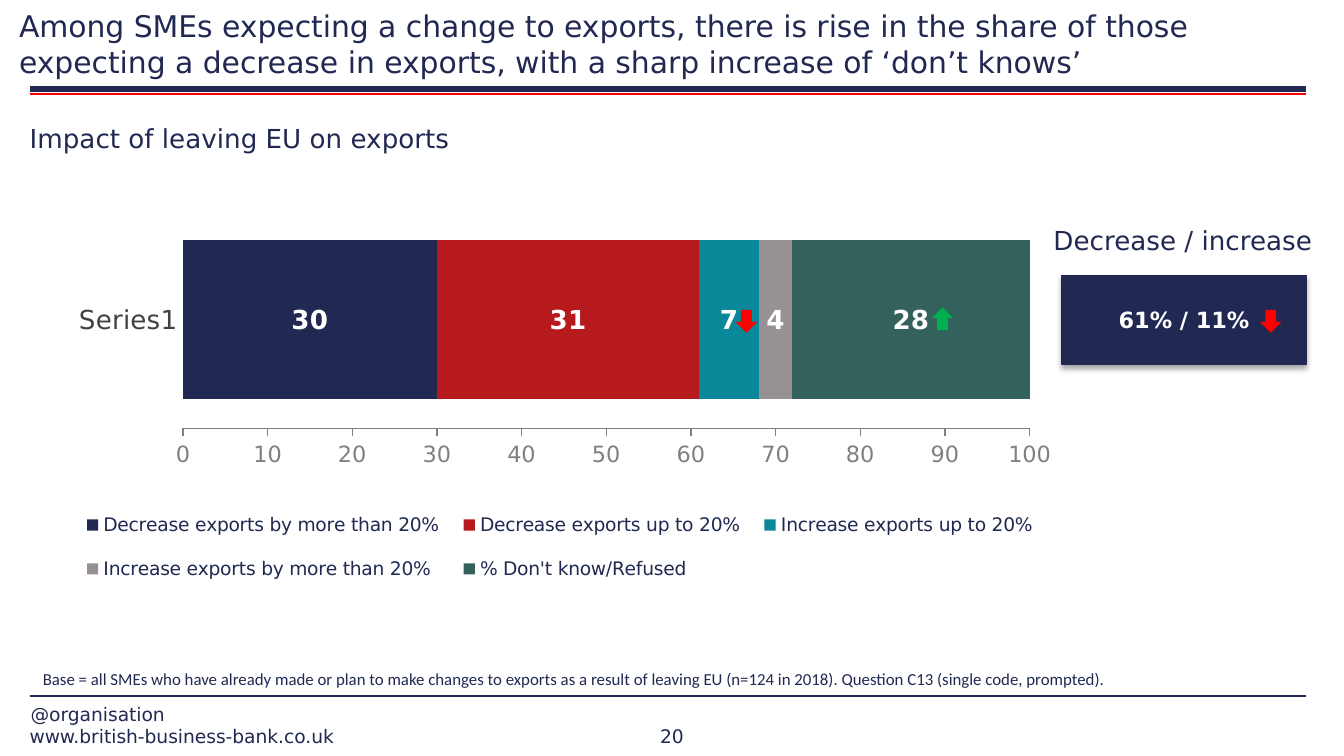
from lxml import etree
from pptx import Presentation
from pptx.chart.data import CategoryChartData
from pptx.dml.color import RGBColor
from pptx.enum.chart import XL_CHART_TYPE, XL_LEGEND_POSITION, XL_TICK_MARK
from pptx.enum.shapes import MSO_CONNECTOR, MSO_SHAPE
from pptx.enum.text import MSO_ANCHOR, MSO_AUTO_SIZE, PP_ALIGN
from pptx.oxml import parse_xml
from pptx.oxml.ns import nsdecls, qn
from pptx.util import Cm, Pt

LEFT, CENTER = PP_ALIGN.LEFT, PP_ALIGN.CENTER
TOP, MIDDLE, BOTTOM = MSO_ANCHOR.TOP, MSO_ANCHOR.MIDDLE, MSO_ANCHOR.BOTTOM

COLORS = {
    "navy": "212952", "crimson": "B61A1D", "teal": "088899", "grey": "979195",
    "pine": "33615B", "red": "FF0000", "green": "00B050", "white": "FFFFFF",
    "category": "424242", "scale": "808080",
}
FONT = "DejaVu Sans"

TITLE = ("Among SMEs expecting a change to exports, there is rise in the share of those "
         "expecting a decrease in exports, with a sharp increase of ‘don’t knows’")
SUBTITLE = "Impact of leaving EU on exports"
BASE_NOTE = ("Base = all SMEs who have already made or plan to make changes to exports as a result "
             "of leaving EU (n=124 in 2018). Question C13 (single code, prompted).")
SUMMARY_HEADING = "Decrease / increase"
SUMMARY = "61% / 11%"

# text, box in cm, alignment
FOOTERS = [
    ("www.british-business-bank.co.uk", (0.56, 13.69, 8.1, 0.43), LEFT),
    ("@organisation", (0.58, 13.28, 8.08, 0.43), LEFT),
    ("20", (11.2, 13.69, 3, 0.43), CENTER),
]
# height on the page in cm, colour, width in points
RULES = [(1.68, "navy", 3), (1.78, "red", 1), (13.16, "navy", 1)]
RULE_LEFT, RULE_RIGHT = 0.56, 24.69

CATEGORY = "Series1"
SERIES = [
    ("Decrease exports by more than 20%", 30, "navy"),
    ("Decrease exports up to 20%", 31, "crimson"),
    ("Increase exports up to 20%", 7, "teal"),
    ("Increase exports by more than 20%", 4, "grey"),
    ("% Don't know/Refused", 28, "pine"),
]
CHART_BOX = (0.71, 3.99, 19.35, 7.47)
PLOT_AREA = (0.142, 0, 0.827, 0.55)
LEGEND_AREA = (0.03, 0.71, 0.96, 0.28)

# left, top in cm, rotation, colour
TREND_ARROWS = [(13.89, 5.87, 90, "red"), (17.6, 5.82, 270, "green"), (23.8, 5.87, 90, "red")]


def rgb(name):
    return RGBColor.from_string(COLORS[name])


def cm(box):
    return [Cm(length) for length in box]


def style_font(font, size, color="navy", bold=False, name=FONT):
    font.name, font.size, font.bold = name, Pt(size), bold
    font.color.rgb = rgb(color)


def write(shape, text, size, color="navy", align=LEFT, anchor=TOP, bold=False,
          name=FONT, inset=True):
    frame = shape.text_frame
    frame.word_wrap = True
    frame.auto_size = MSO_AUTO_SIZE.NONE
    frame.vertical_anchor = anchor
    if not inset:
        frame.margin_left = frame.margin_right = frame.margin_top = frame.margin_bottom = 0
    frame.text = text
    para = frame.paragraphs[0]
    para.alignment = align
    para.space_before = Pt(0)
    style_font(para.font, size, color, bold, name)


def add_text(page, box, text, size, **options):
    write(page.shapes.add_textbox(*cm(box)), text, size, **options)


def fill_placeholder(holder, box, text, size, anchor):
    holder.left, holder.top, holder.width, holder.height = cm(box)
    write(holder, text, size, anchor=anchor, inset=False)


def add_rule(page, y, color, width):
    rule = page.shapes.add_connector(
        MSO_CONNECTOR.STRAIGHT, Cm(RULE_LEFT), Cm(y), Cm(RULE_RIGHT), Cm(y))
    rule.line.color.rgb = rgb(color)
    rule.line.width = Pt(width)
    etree.SubElement(rule._element.spPr, qn("a:effectLst"))


def add_filled(page, kind, box, color):
    shape = page.shapes.add_shape(kind, *cm(box))
    shape.shadow.inherit = False
    shape.fill.solid()
    shape.fill.fore_color.rgb = rgb(color)
    shape.line.fill.background()
    return shape


def add_badge(page):
    badge = add_filled(page, MSO_SHAPE.RECTANGLE, (20.07, 5.21, 4.62, 1.68), "navy")
    badge.line.color.rgb = rgb("navy")
    badge.line.width = Pt(0.75)
    effects = badge._element.spPr.find(qn("a:effectLst"))
    effects.append(parse_xml(
        f'<a:outerShdw {nsdecls("a")} blurRad="39370" dist="22860" dir="5400000" rotWithShape="0">'
        '<a:srgbClr val="000000"><a:alpha val="35000"/></a:srgbClr></a:outerShdw>'))
    write(badge, SUMMARY, 12, "white", CENTER, MIDDLE, bold=True)


def set_layout(element, area, inner=False):
    """Give a plot area or legend a fixed place, in fractions of the chart."""
    for old in element.findall(qn("c:layout")):
        element.remove(old)
    target = '<c:layoutTarget val="inner"/>' if inner else ""
    modes = "".join(f'<c:{axis}Mode val="edge"/>' for axis in "xy")
    sizes = "".join(f'<c:{key} val="{value}"/>' for key, value in zip("xywh", area))
    layout = parse_xml(f'<c:layout {nsdecls("c")}><c:manualLayout>{target}{modes}{sizes}'
                       '</c:manualLayout></c:layout>')
    position = element.find(qn("c:legendPos"))
    element.insert(0 if position is None else 1, layout)


def add_export_chart(page):
    chart_data = CategoryChartData()
    chart_data.categories = [CATEGORY]
    for name, value, _ in SERIES:
        chart_data.add_series(name, [value])
    chart = page.shapes.add_chart(
        XL_CHART_TYPE.BAR_STACKED, *cm(CHART_BOX), chart_data).chart
    chart.has_title = False
    style_font(chart.font, 18, name="Calibri")

    plot = chart.plots[0]
    plot.gap_width, plot.overlap, plot.vary_by_categories = 37, 100, False
    for series, (_, _, color) in zip(plot.series, SERIES):
        series.format.fill.solid()
        series.format.fill.fore_color.rgb = rgb(color)
        series.data_labels.show_value = True
        style_font(series.data_labels.font, 14, "white", bold=True)

    categories = chart.category_axis
    categories.major_tick_mark = XL_TICK_MARK.NONE
    categories.format.line.fill.background()
    style_font(categories.tick_labels.font, 14, "category")

    scale = chart.value_axis
    scale.minimum_scale, scale.maximum_scale, scale.major_unit = 0, 100, 10
    scale.has_major_gridlines = False
    scale.major_tick_mark = XL_TICK_MARK.OUTSIDE
    scale.format.line.color.rgb = rgb("scale")
    style_font(scale.tick_labels.font, 12, "scale")

    chart.has_legend = True
    chart.legend.position = XL_LEGEND_POSITION.BOTTOM
    chart.legend.include_in_layout = False
    style_font(chart.legend.font, 10)
    set_layout(chart.legend._element, LEGEND_AREA)
    set_layout(chart._chartSpace.chart.plotArea, PLOT_AREA, inner=True)


def main():
    deck = Presentation()
    deck.slide_width, deck.slide_height = Cm(25.4), Cm(14.29)
    page = deck.slides.add_slide(deck.slide_layouts[0])

    for rule in RULES:
        add_rule(page, *rule)
    for text, box, align in FOOTERS:
        add_text(page, box, text, 10, align=align, anchor=BOTTOM, inset=False)
    fill_placeholder(page.shapes.title, (0.36, 0.08, 25.04, 1.42), TITLE, 16, BOTTOM)
    fill_placeholder(page.placeholders[1], (0.56, 2.31, 24.13, 9.88), SUBTITLE, 14, TOP)
    add_text(page, (0.56, 12.52, 24.51, 0.64), BASE_NOTE, 9, name="Calibri")
    add_badge(page)
    add_export_chart(page)
    add_text(page, (19.66, 4.11, 5.84, 0.86), SUMMARY_HEADING, 14)
    for left, top, rotation, color in TREND_ARROWS:
        arrow = add_filled(page, MSO_SHAPE.RIGHT_ARROW, (left, top, 0.43, 0.41), color)
        arrow.rotation = rotation

    deck.save("out.pptx")


if __name__ == "__main__":
    main()
